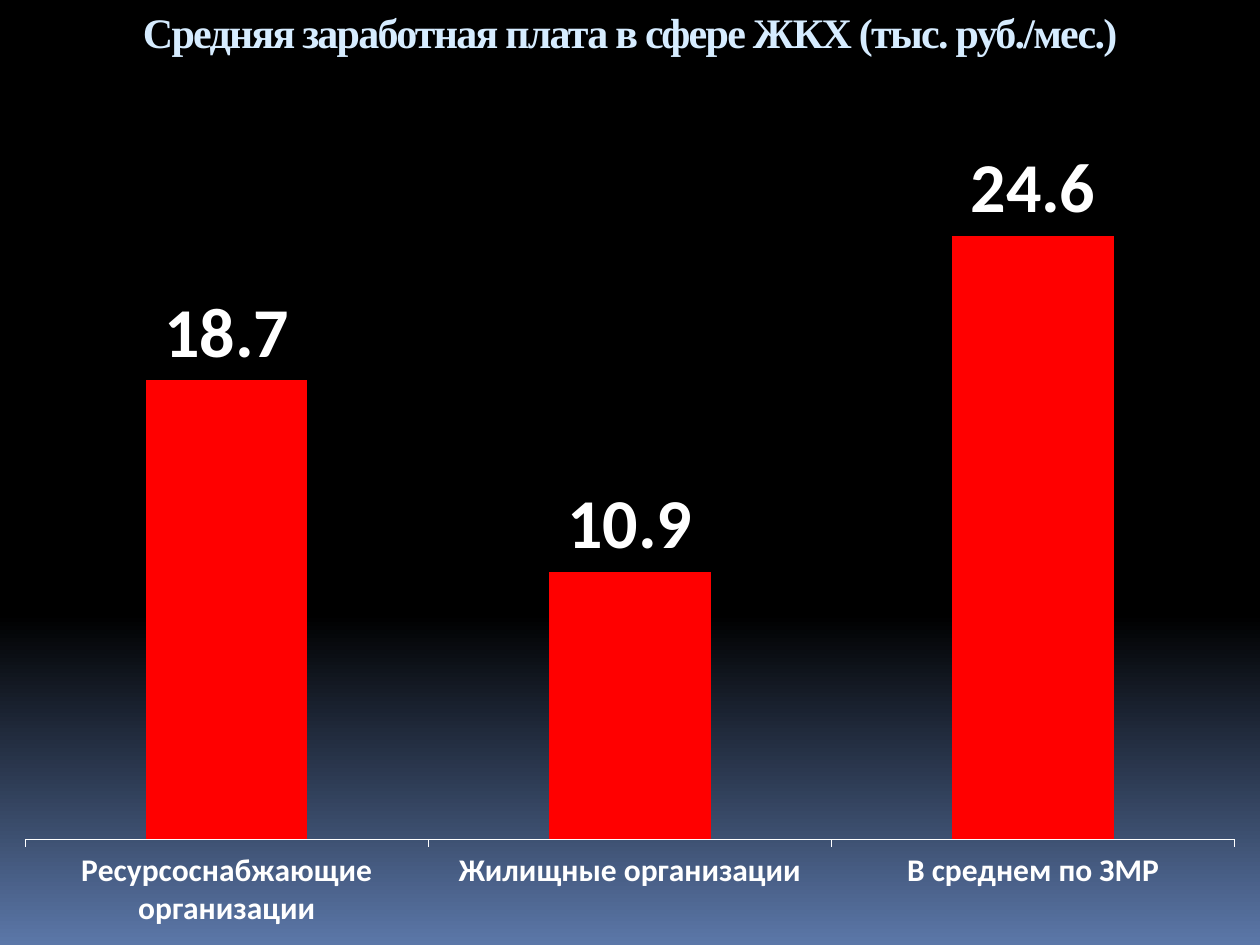
import copy
from dataclasses import dataclass

import lxml.etree
import pptx
import pptx.chart.data
import pptx.dml.color
import pptx.enum.chart
import pptx.enum.text
import pptx.oxml.ns
import pptx.util

EMU_PER_PX = 914400 / 126
WIDTH, HEIGHT = 1260, 945


@dataclass(frozen=True)
class Theme:
    background: tuple = ((0, "000000"), (65, "000000"), (100, "5B77A8"))
    title: str = "D6ECFF"
    text: str = "FFFFFF"
    bar: str = "FF0000"
    title_font: str = "Times New Roman"
    chart_font: str = "Calibri"
    title_size: int = 24
    axis_size: int = 18
    label_size: int = 40


THEME = Theme()


def px(n):
    return pptx.util.Emu(round(n * EMU_PER_PX))


def rgb(value):
    return pptx.dml.color.RGBColor.from_string(value)


def set_font(font, name, size, color, bold=True):
    font.name = name
    font.size = pptx.util.Pt(size)
    font.bold = bold
    font.color.rgb = rgb(color)


def set_background(s):
    fill = s.background.fill
    fill.gradient()
    fill.gradient_angle = 270
    first = s.background._cSld.find(".//" + pptx.oxml.ns.qn("a:gs"))
    first.addnext(copy.deepcopy(first))
    for stop, (position, color) in zip(fill.gradient_stops, THEME.background):
        stop.position = position / 100
        stop.color.rgb = rgb(color)


def add_title(s, text):
    sp = s.shapes.title
    sp.left, sp.top, sp.width, sp.height = px(0), px(0), px(WIDTH), px(63)
    tf = sp.text_frame
    tf.text = text
    tf.word_wrap = True
    tf.vertical_anchor = pptx.enum.text.MSO_ANCHOR.MIDDLE
    p = tf.paragraphs[0]
    p.alignment = pptx.enum.text.PP_ALIGN.CENTER
    r = p.runs[0]
    set_font(r.font, THEME.title_font, THEME.title_size, THEME.title)
    r.font._element.set("spc", "-100")


def set_plot_area(chart, **fractions):
    """Fix the inner plot area, as fractions of the chart's size."""
    qn = pptx.oxml.ns.qn
    plot_area = chart._chartSpace.chart.plotArea
    layout = plot_area.find(qn("c:layout"))
    if layout is None:
        layout = lxml.etree.Element(qn("c:layout"))
        plot_area.insert(0, layout)
    manual = lxml.etree.SubElement(layout, qn("c:manualLayout"))
    settings = {"layoutTarget": "inner", "xMode": "edge", "yMode": "edge", **fractions}
    for tag, value in settings.items():
        lxml.etree.SubElement(manual, qn("c:" + tag)).set("val", str(value))


def add_salary_chart(s, salaries):
    data = pptx.chart.data.CategoryChartData(number_format="0.0")
    data.categories = list(salaries)
    data.add_series("Series 1", list(salaries.values()))
    top = 86
    chart = s.shapes.add_chart(
        pptx.enum.chart.XL_CHART_TYPE.COLUMN_CLUSTERED,
        px(0), px(top), px(WIDTH), px(HEIGHT - top), data,
    ).chart
    chart.has_title = False
    chart.has_legend = False
    set_font(chart.font, THEME.chart_font, THEME.axis_size, THEME.text, bold=False)
    set_plot_area(chart, x=0.02, y=0.02, w=0.96, h=0.857)

    values = chart.value_axis
    values.minimum_scale, values.maximum_scale = 0, 30
    values.has_major_gridlines = False
    values.visible = False

    categories = chart.category_axis
    categories.major_tick_mark = pptx.enum.chart.XL_TICK_MARK.OUTSIDE
    categories.format.line.color.rgb = rgb(THEME.text)
    set_font(categories.tick_labels.font, THEME.chart_font, THEME.axis_size, THEME.text)

    plot = chart.plots[0]
    plot.vary_by_categories = False
    plot.gap_width = 150
    bars = plot.series[0]
    bars.format.fill.solid()
    bars.format.fill.fore_color.rgb = rgb(THEME.bar)
    labels = bars.data_labels
    labels.show_value = True
    labels.position = pptx.enum.chart.XL_LABEL_POSITION.OUTSIDE_END
    set_font(labels.font, THEME.chart_font, THEME.label_size, THEME.text)


def main():
    prs = pptx.Presentation()
    prs.slide_width, prs.slide_height = px(WIDTH), px(HEIGHT)
    s = prs.slides.add_slide(prs.slide_layouts.get_by_name("Title Only"))
    set_background(s)
    add_title(s, "Средняя заработная плата в сфере ЖКХ (тыс. руб./мес.)")
    add_salary_chart(s, {
        "Ресурсоснабжающие организации": 18.7,
        "Жилищные организации": 10.9,
        "В среднем по ЗМР": 24.6,
    })
    prs.save("out.pptx")


if __name__ == "__main__":
    main()
